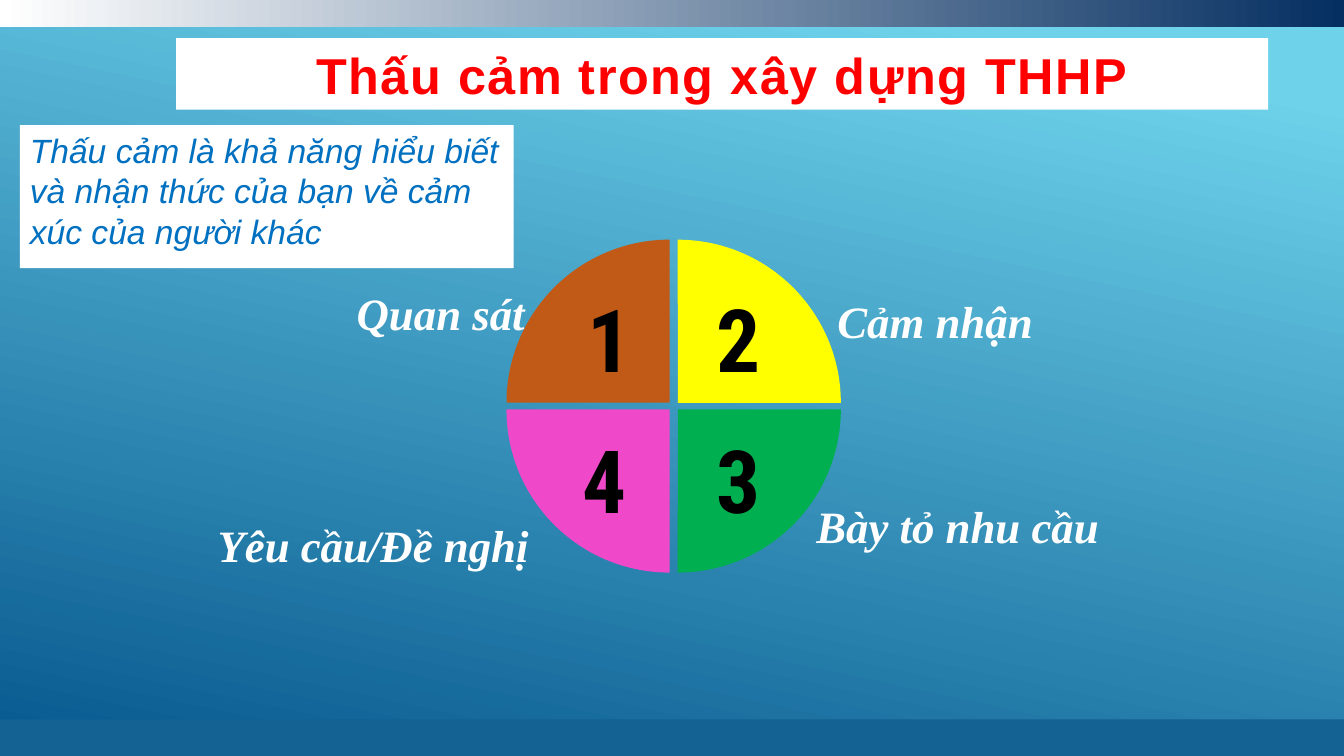
from dataclasses import dataclass
from math import cos, pi, radians, sin, tan

from lxml import etree
from pptx import Presentation
from pptx.dml.color import RGBColor
from pptx.enum.shapes import MSO_SHAPE
from pptx.enum.text import MSO_ANCHOR, MSO_AUTO_SIZE, PP_ALIGN
from pptx.oxml.ns import qn
from pptx.util import Pt

RECTANGLE = MSO_SHAPE.RECTANGLE
MIDDLE, TOP = MSO_ANCHOR.MIDDLE, MSO_ANCHOR.TOP
NO_FIT, GROW = MSO_AUTO_SIZE.NONE, MSO_AUTO_SIZE.SHAPE_TO_FIT_TEXT
LEFT, CENTER = PP_ALIGN.LEFT, PP_ALIGN.CENTER

TITLE = "Thấu cảm trong xây dựng THHP"
DEFINITION = "Thấu cảm là khả năng hiểu biết và nhận thức của bạn về cảm xúc của người khác"
STEPS = [
    {"number": "1", "number_width": 39, "side": (-1, -1), "color": "C15A16",
     "facing": 180, "rotation": 45, "curves": 2,
     "label": "Quan sát", "label_box": (247.7, 200.2, 136, 46)},
    {"number": "2", "number_width": 47, "side": (1, -1), "color": "FFFF00",
     "facing": 90, "rotation": 225, "curves": 1,
     "label": "Cảm nhận", "label_box": (591, 206, 155.5, 46)},
    {"number": "3", "number_width": 47, "side": (1, 1), "color": "00B050",
     "facing": 0, "rotation": 45, "curves": 2,
     "label": "Bày tỏ nhu cầu", "label_box": (576, 352.4, 218, 46)},
    {"number": "4", "number_width": 47, "side": (-1, 1), "color": "EF48C9",
     "facing": 90, "rotation": 45, "curves": 1,
     "label": "Yêu cầu/Đề nghị", "label_box": (148.3, 366.1, 239, 46)},
]


@dataclass(frozen=True)
class Theme:
    white: str = "FFFFFF"
    black: str = "000000"
    red: str = "FF0000"
    blue: str = "0070C0"
    footer: str = "146194"
    navy: str = "052F61"
    sky: str = "6ED2EB"
    deep: str = "06588E"
    sans: str = "Arial"
    serif: str = "Times New Roman"
    condensed: str = "Roboto Condensed"
    title_size: float = 36
    number_size: float = 62.3
    label_size: float = 32
    body_size: float = 24


THEME = Theme()
WIDTH, HEIGHT = 960, 540
WHEEL_X, WHEEL_Y, RADIUS = 481.2, 290.1, 116.5
GAP_X, GAP_Y = 5.8, 4.8
NUMBER_X, NUMBER_Y = 479.7, 291.4
NUMBER_REACH_X, NUMBER_REACH_Y = 47.7, 50.4
NUMBER_HEIGHT = 83


def rgb(value):
    return RGBColor.from_string(value)


def paint(fill, color):
    fill.solid()
    fill.fore_color.rgb = rgb(color)


def paint_gradient(fill, stops, angle):
    fill.gradient()
    fill.gradient_angle = angle
    for stop, (position, color) in zip(fill.gradient_stops, stops):
        stop.position = position
        stop.color.rgb = rgb(color)


def place(shape, bounds):
    shape.left, shape.top, shape.width, shape.height = (Pt(v) for v in bounds)


def write(shape, text, font, size, color, bold=False, italic=False,
          align=LEFT, anchor=MIDDLE, wrap=False, fit=GROW):
    frame = shape.text_frame
    frame.word_wrap = wrap
    frame.auto_size = fit
    frame.vertical_anchor = anchor
    para = frame.paragraphs[0]
    para.alignment = align
    span = para.add_run()
    span.text = text
    span.font.name = font
    span.font.size = Pt(size)
    span.font.bold = bold
    span.font.italic = italic
    span.font.color.rgb = rgb(color)
    return para, span


def add_band(page, bounds):
    band = page.shapes.add_shape(RECTANGLE, *(Pt(v) for v in bounds))
    band.shadow.inherit = False
    band.line.fill.background()
    return band


def add_text(page, bounds, text, font, size, color, **style):
    box = page.shapes.add_textbox(*(Pt(v) for v in bounds))
    return box, write(box, text, font, size, color, **style)[0]


def polar(angle, radius=RADIUS):
    return radius * cos(angle), radius * sin(angle)


def arc_curves(start, count):
    sweep = pi / 2 / count
    pull = 4 / 3 * tan(sweep / 4)
    for index in range(count):
        first = start + index * sweep
        last = first + sweep
        (x1, y1), (x2, y2) = polar(first), polar(last)
        yield [(x1 - pull * y1, y1 + pull * x1),
               (x2 + pull * y2, y2 - pull * x2), (x2, y2)]


def add_quarter(page, step):
    facing, rotation = radians(step["facing"]), radians(step["rotation"])
    start = facing - pi / 4
    outline = [(0, 0)] + [polar(start + turn * pi / 4) for turn in range(3)]
    left, top = (min(values) for values in zip(*outline))
    side_x, side_y = step["side"]
    local_x, local_y = polar(facing, RADIUS / 2)
    turned_x, turned_y = polar(facing + rotation, RADIUS / 2)
    shift_x = WHEEL_X + side_x * GAP_X / 2 + turned_x - local_x
    shift_y = WHEEL_Y + side_y * GAP_Y / 2 + turned_y - local_y

    points = [(Pt(x + shift_x), Pt(y + shift_y)) for x, y in outline]
    builder = page.shapes.build_freeform(*points[0])
    builder.add_line_segments(points[1:], close=True)
    quarter = builder.convert_to_shape()
    quarter.rotation = step["rotation"]
    quarter.shadow.inherit = False
    quarter.line.fill.background()
    paint(quarter.fill, step["color"])

    route = next(quarter._element.iter(qn("a:path")))
    for piece in list(route):
        route.remove(piece)
    pieces = [("a:moveTo", [(0, 0)]), ("a:lnTo", [polar(start)])]
    pieces += [("a:cubicBezTo", curve) for curve in arc_curves(start, step["curves"])]
    pieces.append(("a:close", []))
    for tag, stops in pieces:
        piece = etree.SubElement(route, qn(tag))
        for x, y in stops:
            etree.SubElement(piece, qn("a:pt"), x=str(int(Pt(x - left))),
                             y=str(int(Pt(y - top))))


def add_number(page, step):
    side_x, side_y = step["side"]
    width = step["number_width"]
    bounds = (NUMBER_X + side_x * NUMBER_REACH_X - width / 2,
              NUMBER_Y + side_y * NUMBER_REACH_Y - NUMBER_HEIGHT / 2,
              width, NUMBER_HEIGHT)
    add_text(page, bounds, step["number"], THEME.condensed, THEME.number_size,
             THEME.black, bold=True, align=CENTER)


def main():
    deck = Presentation()
    deck.slide_width, deck.slide_height = Pt(WIDTH), Pt(HEIGHT)
    page = deck.slides.add_slide(deck.slide_layouts[5])
    paint_gradient(page.background.fill, [(0.1, THEME.sky), (1, THEME.deep)], 258)

    footer = add_band(page, (0, 513.8, WIDTH, 26.2))
    paint(footer.fill, THEME.footer)
    header = add_band(page, (0, 0, WIDTH, 19))
    paint_gradient(header.fill, [(0, THEME.white), (1, THEME.navy)], 0)

    title = page.shapes.title
    place(title, (125.8, 27.3, 780, 51))
    paint(title.fill, THEME.white)
    span = write(title, TITLE, THEME.sans, THEME.title_size, THEME.red,
                 bold=True, align=CENTER, wrap=True, fit=NO_FIT)[1]
    span.font._element.set("spc", "110")

    for step in STEPS:
        add_quarter(page, step)
    for step in STEPS:
        add_number(page, step)
        add_text(page, step["label_box"], step["label"], THEME.serif,
                 THEME.label_size, THEME.white, bold=True, italic=True)

    panel, para = add_text(page, (14.3, 89.3, 352.7, 102.2), DEFINITION,
                           THEME.sans, THEME.body_size, THEME.blue,
                           italic=True, anchor=TOP, wrap=True, fit=NO_FIT)
    paint(panel.fill, THEME.white)
    para.space_after = Pt(6)

    deck.save("out.pptx")


if __name__ == "__main__":
    main()
